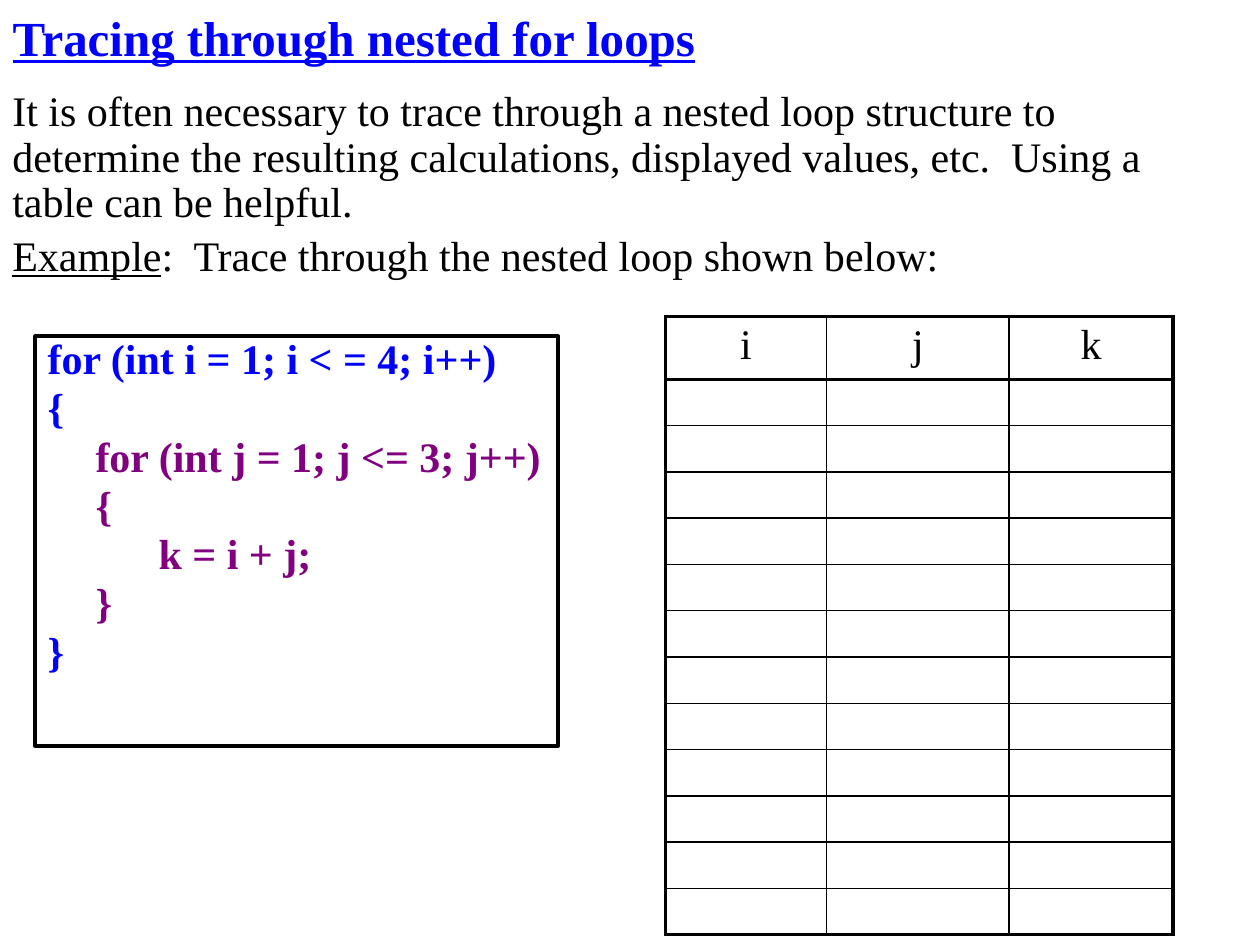
from dataclasses import dataclass

from lxml import etree
from pptx import Presentation
from pptx.dml.color import RGBColor
from pptx.enum.shapes import MSO_SHAPE
from pptx.enum.text import MSO_ANCHOR, PP_ALIGN
from pptx.oxml.ns import qn
from pptx.util import Inches, Pt

RECTANGLE = MSO_SHAPE.RECTANGLE
TOP, MIDDLE = MSO_ANCHOR.TOP, MSO_ANCHOR.MIDDLE
LEFT, CENTER = PP_ALIGN.LEFT, PP_ALIGN.CENTER

BLACK = RGBColor(0, 0, 0)
BLUE = RGBColor(0, 0, 255)
PURPLE = RGBColor(128, 0, 128)

FONT = "Times New Roman"
WIDTH, HEIGHT = Inches(10), Inches(7.5)
COLUMN, ROW = WIDTH / 100, HEIGHT / 75
THIN, THICK = 1, 2.25
GAP = 4.8
CODE_INDENT = Inches(0.38)


@dataclass(frozen=True)
class Area:
    column: float
    row: float
    columns: float
    rows: float

    def box(self) -> tuple[int, int, int, int]:
        return (round(self.column * COLUMN), round(self.row * ROW),
                round(self.columns * COLUMN), round(self.rows * ROW))


@dataclass(frozen=True)
class CodeLine:
    text: str
    color: RGBColor


TITLE_AREA = Area(0, 0, 60.9, 5.8)
INTRO_AREA = Area(0, 6.7, 98.4, 16.2)
CODE_AREA = Area(2.8, 26.7, 41.5, 32.5)
TRACE_AREA = Area(52.8, 25.1, 40.3, 49)

CODE = (
    CodeLine("for (int i = 1; i < = 4; i++)", BLUE),
    CodeLine("{", BLUE),
    CodeLine("\tfor (int j = 1; j <= 3; j++)", PURPLE),
    CodeLine("\t{", PURPLE),
    CodeLine("\t\tk = i + j;", PURPLE),
    CodeLine("\t}", PURPLE),
    CodeLine("}", BLUE),
)
VARIABLES = ("i", "j", "k")
VARIABLE_COLUMNS = (12.8, 14.5, 13)
STEPS = 12
HEADER_ROWS = 4.9


def write(paragraph, text: str, *, size: float = 24, color: RGBColor = BLACK,
          bold: bool = False, underline: bool = False, align=LEFT,
          spacing: float = 1, before: float = 0) -> None:
    paragraph.alignment = align
    paragraph.line_spacing = spacing
    paragraph.space_before = Pt(before)
    run = paragraph.add_run()
    run.text = text
    run.font.name = FONT
    run.font.size = Pt(size)
    run.font.bold = bold
    run.font.underline = underline
    run.font.color.rgb = color


def add_title(slide) -> None:
    title = slide.shapes.title
    title.left, title.top, title.width, title.height = TITLE_AREA.box()
    title.text_frame.vertical_anchor = MIDDLE
    title.text_frame.word_wrap = True
    write(title.text_frame.paragraphs[0], "Tracing through nested for loops",
          size=28, color=BLUE, bold=True, underline=True)


def add_intro(slide) -> None:
    frame = slide.shapes.add_textbox(*INTRO_AREA.box()).text_frame
    frame.word_wrap = True
    write(frame.paragraphs[0],
          "It is often necessary to trace through a nested loop structure to "
          "determine the resulting calculations, displayed values, etc.  "
          "Using a table can be helpful.", spacing=0.9, before=GAP)
    example = frame.add_paragraph()
    write(example, "Example", underline=True, spacing=0.9, before=GAP)
    write(example, ":  Trace through the nested loop shown below:",
          spacing=0.9, before=GAP)


def add_code(slide) -> None:
    code_box = slide.shapes.add_shape(RECTANGLE, *CODE_AREA.box())
    code_box.shadow.inherit = False
    code_box.fill.background()
    code_box.line.color.rgb = BLACK
    code_box.line.width = Pt(THICK)
    frame = code_box.text_frame
    frame.word_wrap = True
    frame.vertical_anchor = TOP
    frame.margin_right = 0
    for number, line in enumerate(CODE):
        paragraph = frame.add_paragraph() if number else frame.paragraphs[0]
        write(paragraph, line.text, color=line.color, bold=True,
              spacing=0.8, before=GAP)
        properties = paragraph._p.get_or_add_pPr()
        properties.set("marL", str(CODE_INDENT))
        properties.set("indent", str(-CODE_INDENT))


def set_borders(cell, **widths: float) -> None:
    properties = cell._tc.get_or_add_tcPr()
    for side, width in widths.items():
        border = etree.SubElement(properties, qn(f"a:ln{side}"), w=str(Pt(width)))
        fill = etree.SubElement(border, qn("a:solidFill"))
        etree.SubElement(fill, qn("a:srgbClr"), val=str(BLACK))


def add_trace_table(slide) -> None:
    last_row, last_column = STEPS, len(VARIABLES) - 1
    trace = slide.shapes.add_table(STEPS + 1, len(VARIABLES), *TRACE_AREA.box()).table
    trace.first_row = False
    trace.horz_banding = False
    for column, columns in zip(trace.columns, VARIABLE_COLUMNS):
        column.width = round(columns * COLUMN)
    step_rows = (TRACE_AREA.rows - HEADER_ROWS) / STEPS
    for r, row in enumerate(trace.rows):
        row.height = round((step_rows if r else HEADER_ROWS) * ROW)
        for c, cell in enumerate(row.cells):
            set_borders(cell,
                        L=THICK if c == 0 else THIN,
                        R=THICK if c == last_column else THIN,
                        T=THICK if r in (0, 1) else THIN,
                        B=THICK if r in (0, last_row) else THIN)
            cell.fill.background()
            if r:
                cell.margin_top = cell.margin_bottom = 0
            else:
                write(cell.text_frame.paragraphs[0], VARIABLES[c],
                      align=CENTER, before=GAP)


def main() -> None:
    presentation = Presentation()
    presentation.slide_width, presentation.slide_height = WIDTH, HEIGHT
    slide = presentation.slides.add_slide(presentation.slide_layouts[5])
    add_intro(slide)
    add_title(slide)
    add_code(slide)
    add_trace_table(slide)
    presentation.save("out.pptx")


if __name__ == "__main__":
    main()
